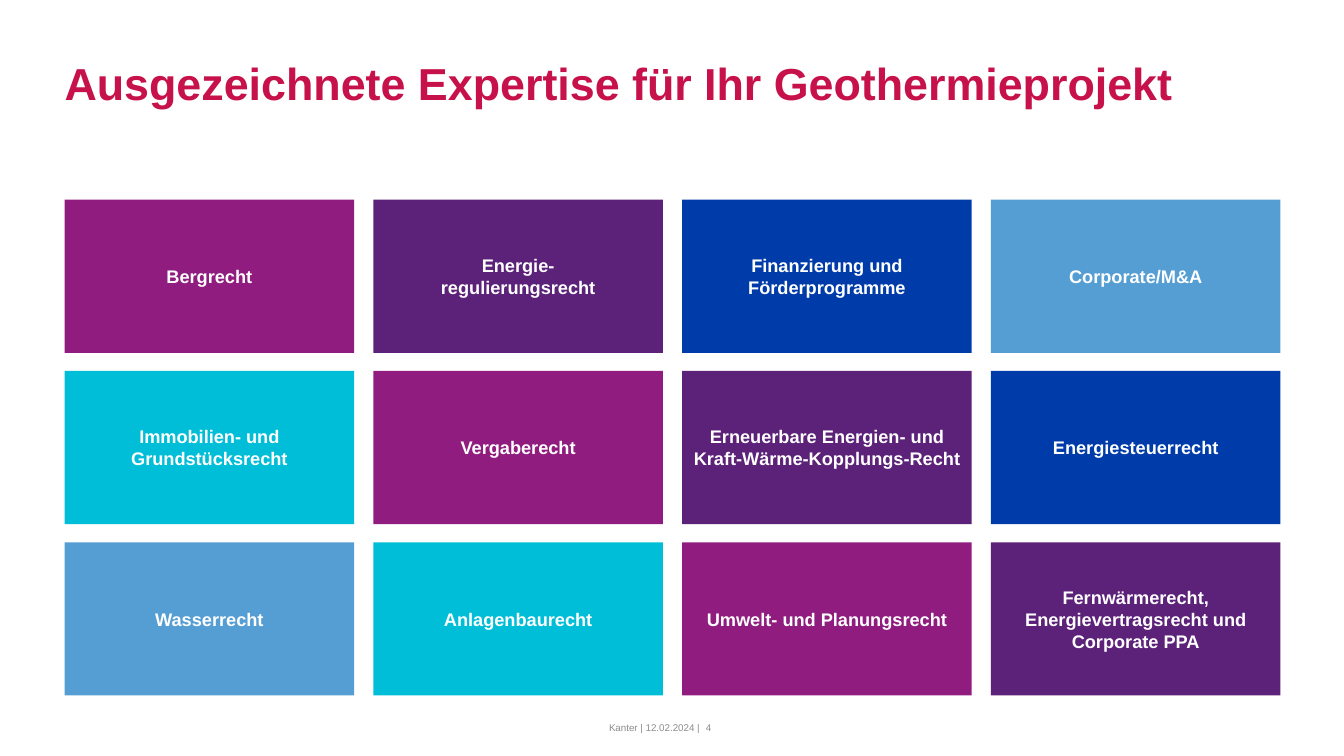
from dataclasses import dataclass

from pptx import Presentation
from pptx import util as u
from pptx.dml.color import RGBColor
from pptx.enum import shapes, text


@dataclass(frozen=True)
class Theme:
    font: str = "Arial"
    title: str = "C7114A"
    label: str = "FFFFFF"
    foot: str = "8C8C8C"
    fills: tuple = ("911C80", "5C2179", "003CA9", "559ED4", "00BED7")
    big: int = 32
    mid: int = 13
    small: int = 7


THEME = Theme()
LEFT, TOP = 0.64, 1.98
WIDTH, HEIGHT = 12.06, 4.92
GAP_X, GAP_Y = 0.19, 0.18
COLS, ROWS = 4, 3

# Each field holds paragraphs; "\n" marks a line break within one
FIELDS = [
    ["Bergrecht"],
    ["Energie-", "regulierungsrecht"],
    ["Finanzierung und Förderprogramme"],
    ["Corporate/M&A"],
    ["Immobilien- und Grundstücksrecht"],
    ["Vergaberecht"],
    ["Erneuerbare Energien- und\nKraft-Wärme-Kopplungs-Recht"],
    ["Energiesteuerrecht"],
    ["Wasserrecht"],
    ["Anlagenbaurecht"],
    ["Umwelt- und Planungsrecht"],
    ["Fernwärmerecht,", "Energievertragsrecht und\nCorporate PPA"],
]


def place(shape, left, top, width, height):
    shape.left, shape.top = u.Inches(left), u.Inches(top)
    shape.width, shape.height = u.Inches(width), u.Inches(height)


def write(frame, paras, size, color, bold=False, align=text.PP_ALIGN.LEFT):
    frame.word_wrap = True
    frame.auto_size = text.MSO_AUTO_SIZE.NONE
    for i, words in enumerate(paras):
        para = frame.add_paragraph() if i else frame.paragraphs[0]
        para.alignment = align
        for j, line in enumerate(words.split("\n")):
            if j:
                para.add_line_break()
            run = para.add_run()
            run.text = line
            font = run.font
            font.name, font.size, font.bold = THEME.font, u.Pt(size), bold
            font.color.rgb = RGBColor.from_string(color)


def add_title(slide, words):
    title = slide.shapes.title
    place(title, 0.64, 0.61, 12.05, 1.14)
    frame = title.text_frame
    frame.margin_left = frame.margin_right = 0
    frame.margin_top = frame.margin_bottom = 0
    frame.vertical_anchor = text.MSO_ANCHOR.TOP
    write(frame, [words], THEME.big, THEME.title, bold=True)
    frame.paragraphs[0].line_spacing = 0.9


def add_tile(slide, index, paras):
    row, col = divmod(index, COLS)
    width = (WIDTH - GAP_X * (COLS - 1)) / COLS
    height = (HEIGHT - GAP_Y * (ROWS - 1)) / ROWS
    tile = slide.shapes.add_shape(
        shapes.MSO_SHAPE.RECTANGLE,
        u.Inches(LEFT + col * (width + GAP_X)),
        u.Inches(TOP + row * (height + GAP_Y)),
        u.Inches(width), u.Inches(height))
    tile.shadow.inherit = False
    tile.fill.solid()
    fill = THEME.fills[index % len(THEME.fills)]
    tile.fill.fore_color.rgb = RGBColor.from_string(fill)
    tile.line.fill.background()
    tile.text_frame.vertical_anchor = text.MSO_ANCHOR.MIDDLE
    write(tile.text_frame, paras, THEME.mid, THEME.label, True,
          text.PP_ALIGN.CENTER)


def add_note(slide, words, left, width, align, inset):
    box = slide.shapes.add_textbox(
        u.Inches(left), u.Inches(7.11), u.Inches(width), u.Inches(0.39))
    frame = box.text_frame
    frame.margin_left = frame.margin_right = u.Inches(inset)
    write(frame, [words], THEME.small, THEME.foot, align=align)


def main():
    deck = Presentation()
    deck.slide_width, deck.slide_height = u.Inches(13.33), u.Inches(7.5)
    slide = deck.slides.add_slide(deck.slide_layouts[5])

    # Heading
    add_title(slide, "Ausgezeichnete Expertise für Ihr Geothermieprojekt")

    # Footer and page number
    add_note(slide, "Kanter | 12.02.2024 |", 5.57, 1.84,
             text.PP_ALIGN.CENTER, 0.1)
    add_note(slide, "4", 7, 0.39, text.PP_ALIGN.LEFT, 0)

    # Grid of legal fields, colours cycling in reading order
    for index, paras in enumerate(FIELDS):
        add_tile(slide, index, paras)

    deck.save("out.pptx")


if __name__ == "__main__":
    main()
